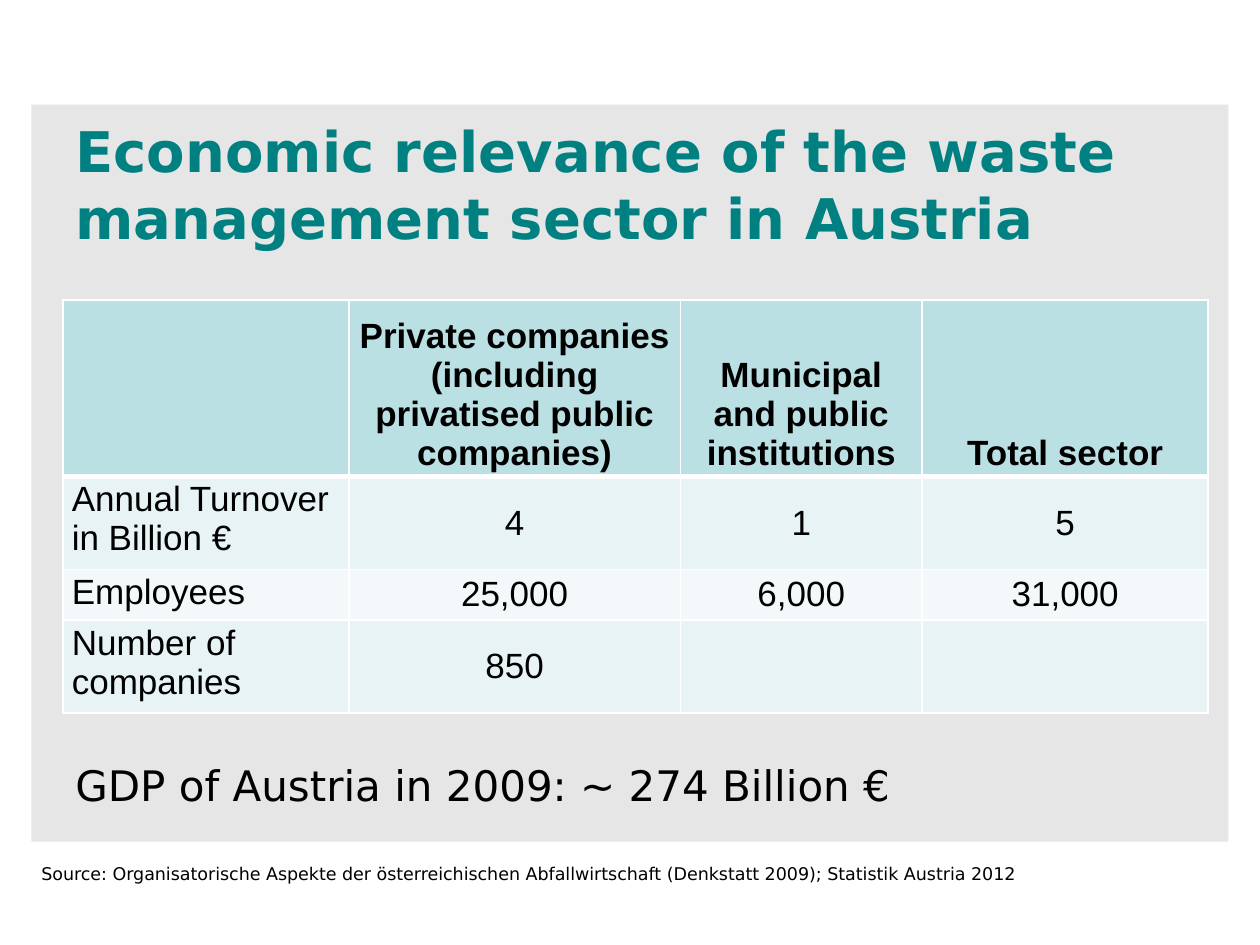
import pptx
import pptx.util
import pptx.dml.color
import pptx.enum.shapes
import pptx.enum.text
import pptx.oxml
import pptx.oxml.ns

Inches, Pt = pptx.util.Inches, pptx.util.Pt
PP_ALIGN = pptx.enum.text.PP_ALIGN
MSO_ANCHOR = pptx.enum.text.MSO_ANCHOR


def rgb(value):
    return pptx.dml.color.RGBColor.from_string(value)


def add_run(p, text, size, font, color="000000", bold=False):
    r = p.add_run()
    r.text = text
    r.font.size = Pt(size)
    r.font.name = font
    r.font.bold = bold
    r.font.color.rgb = rgb(color)


prs = pptx.Presentation()
prs.slide_width, prs.slide_height = Inches(10), Inches(7.5)
s = prs.slides.add_slide(prs.slide_layouts[6])

panel = s.shapes.add_shape(
    pptx.enum.shapes.MSO_SHAPE.RECTANGLE,
    Inches(0.25), Inches(0.83), Inches(9.5), Inches(5.85))
panel.shadow.inherit = False
panel.fill.solid()
panel.fill.fore_color.rgb = rgb("E6E6E6")
panel.line.fill.background()

texts = [
    ("Economic relevance of the waste management sector in Austria",
     (0.5, 0.83, 9, 1.25), 32, "008080", True, MSO_ANCHOR.MIDDLE, 1),
    ("Source: Organisatorische Aspekte der österreichischen Abfallwirtschaft "
     "(Denkstatt 2009); Statistik Austria 2012",
     (0.23, 6.8, 9.45, 0.27), 10, "000000", False, MSO_ANCHOR.TOP, 1),
    ("GDP of Austria in 2009: ~ 274 Billion €",
     (0.5, 5.94, 9.23, 0.76), 24, "000000", False, MSO_ANCHOR.TOP, 1.1),
]
for text, box, size, color, bold, anchor, spacing in texts:
    tf = s.shapes.add_textbox(*map(Inches, box)).text_frame
    tf.word_wrap = True
    tf.vertical_anchor = anchor
    p = tf.paragraphs[0]
    p.line_spacing = spacing
    add_run(p, text, size, "DejaVu Sans", color, bold)

rows = [
    ["", "Private companies (including privatised public companies)",
     "Municipal and public institutions", "Total sector"],
    ["Annual Turnover in Billion €", "4", "1", "5"],
    ["Employees", "25,000", "6,000", "31,000"],
    ["Number of companies", "850", "", ""],
]
fills = ["BBE0E3", "E7F3F4", "F3F9FA", "E7F3F4"]
widths = [2.27, 2.63, 1.92, 2.27]
heights = [1.4, 0.74, 0.4, 0.74]

table = s.shapes.add_table(
    len(rows), len(widths), Inches(0.5), Inches(2.38),
    Inches(sum(widths)), Inches(sum(heights))).table
for column, width in zip(table.columns, widths):
    column.width = Inches(width)
for i, (row, height) in enumerate(zip(rows, heights)):
    table.rows[i].height = Inches(height)
    for j, text in enumerate(row):
        cell = table.cell(i, j)
        cell.margin_left = cell.margin_right = Inches(0.07)
        cell.margin_top = cell.margin_bottom = Inches(0.03)
        if i == 0:
            cell.vertical_anchor = MSO_ANCHOR.BOTTOM
        elif j > 0:
            cell.vertical_anchor = MSO_ANCHOR.MIDDLE
        p = cell.text_frame.paragraphs[0]
        p.alignment = PP_ALIGN.CENTER if j > 0 else PP_ALIGN.LEFT
        if text:
            add_run(p, text, 20, "Arial", bold=i == 0)
        tcPr = cell._tc.get_or_add_tcPr()
        for side in "LRTB":
            thick = (i, side) in [(0, "B"), (1, "T")]
            tcPr.append(pptx.oxml.parse_xml(
                f'<a:ln{side} {pptx.oxml.ns.nsdecls("a")} w="{Pt(3 if thick else 1)}">'
                '<a:solidFill><a:srgbClr val="FFFFFF"/></a:solidFill>'
                f'</a:ln{side}>'))
        cell.fill.solid()
        cell.fill.fore_color.rgb = rgb(fills[i])

prs.save("out.pptx")
